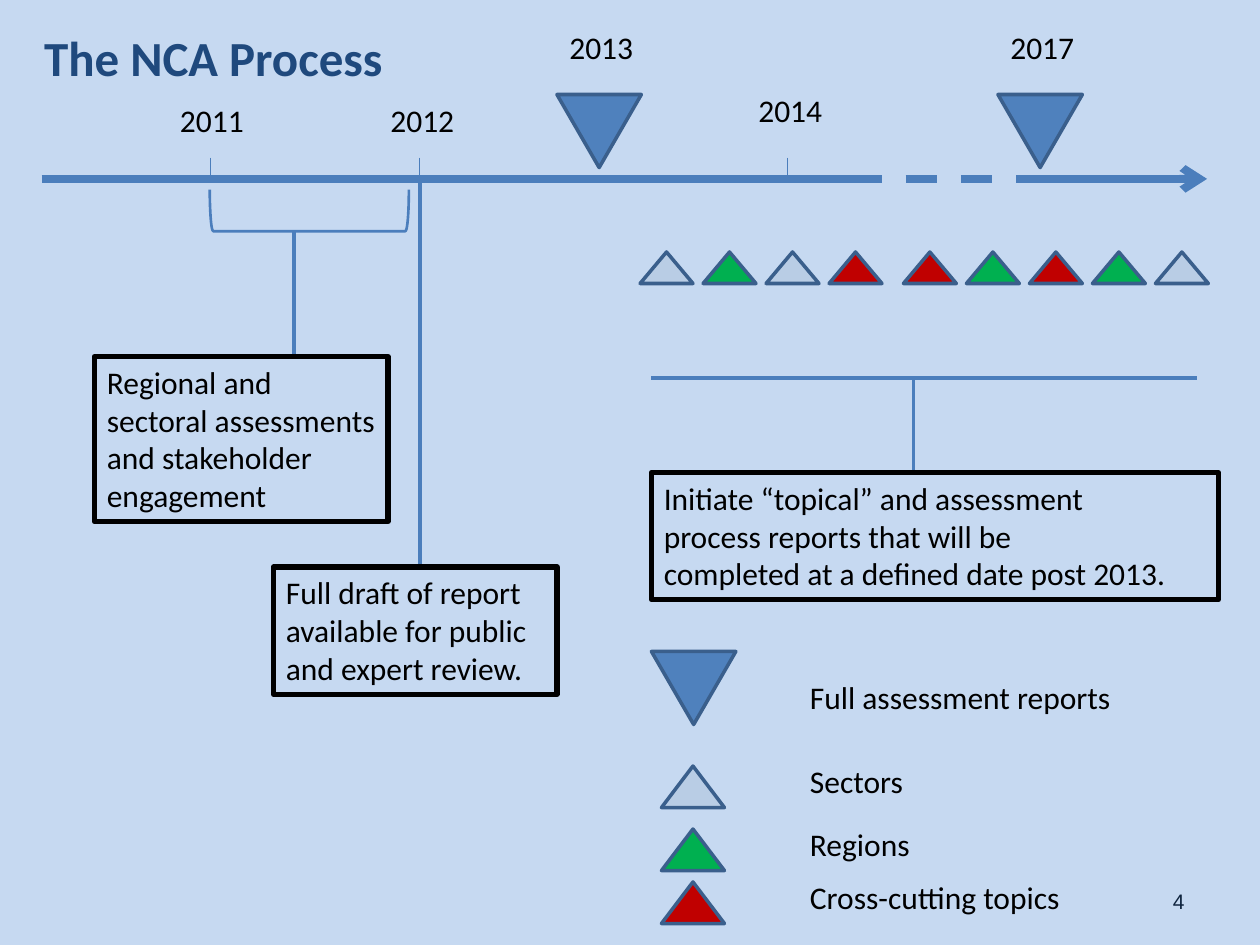
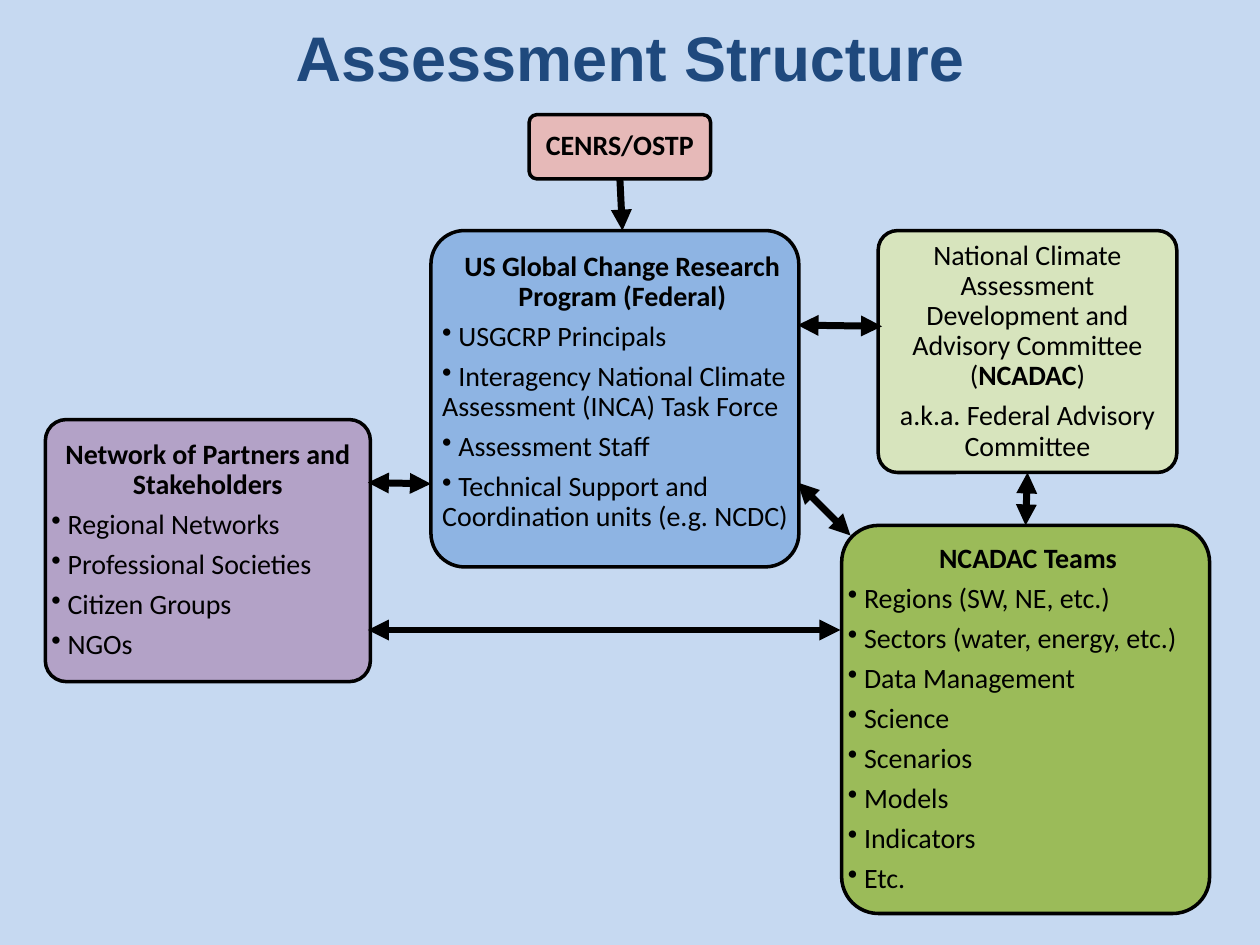
import pptx
import pptx.dml.color
import pptx.enum.dml
import pptx.enum.shapes
import pptx.enum.text
import pptx.oxml
import pptx.oxml.ns
import pptx.util

Inches, Pt = pptx.util.Inches, pptx.util.Pt
RGBColor = pptx.dml.color.RGBColor
SHAPE = pptx.enum.shapes.MSO_SHAPE
ALIGN = pptx.enum.text.PP_ALIGN
ANCHOR = pptx.enum.text.MSO_ANCHOR
qn = pptx.oxml.ns.qn

SKY = RGBColor(0xC6, 0xD9, 0xF1)
NAVY = RGBColor(0x1F, 0x49, 0x7D)
INK = RGBColor(0x0F, 0x24, 0x3E)
BLACK = RGBColor(0, 0, 0)
BLUE = RGBColor(0x4F, 0x81, 0xBD)
EDGE = RGBColor(0x3A, 0x5F, 0x8C)
RULE = RGBColor(0x4B, 0x7E, 0xBC)
PALE = RGBColor(0xB9, 0xCD, 0xE5)
GREEN = RGBColor(0x00, 0xB0, 0x50)
RED = RGBColor(0xC0, 0x00, 0x00)
PINK = RGBColor(0xE6, 0xB9, 0xB8)
AZURE = RGBColor(0x8E, 0xB4, 0xE3)
MAUVE = RGBColor(0xB3, 0xA2, 0xC7)
CREAM = RGBColor(0xD7, 0xE4, 0xBD)
OLIVE = RGBColor(0x9B, 0xBB, 0x59)

BODY = {"name": "Calibri", "size": Pt(18), "bold": False}
SMALL = {"name": "Calibri", "size": Pt(16)}
PAGE = {"name": "Arial", "size": Pt(12), "bold": False}
TIGHT = {"line_spacing": 0.9, "space_after": Pt(5.6)}
BARE = dict.fromkeys(
    ("margin_left", "margin_top", "margin_right", "margin_bottom"), 0)
SLIM = {"margin_left": Inches(0.05), "margin_right": Inches(0.05),
        "margin_top": Inches(0.01), "margin_bottom": Inches(0.01)}

YEARS = [("2011", 1.33, 0.75), ("2012", 3, 0.75), ("2013", 4.42, 0.17),
         ("2014", 5.92, 0.67), ("2017", 7.92, 0.17)]
TICKS = [1.67, 3.33, 6.25]
PEAKS = [(4.42, 0.75), (7.92, 0.75), (5.17, 5.17)]
TOPICS = {"Sectors": (PALE, 6.08), "Regions": (GREEN, 6.58),
          "Cross-cutting topics": (RED, 7)}
S, R, C = (fill for fill, top in TOPICS.values())
ROWS = [(5.08, [S, R, S, C]), (7.17, [C, R, C, R, S])]
AXIS = 1.42
RULES = [
    ((3.33, 4.5), (3.33, AXIS), 2.25, {}),
    ((7.25, 3.75), (7.25, 3), 2.25, {}),
    ((5.17, 3), (9.5, 3), 2.25, {}),
    ((2.33, 2.83), (2.33, 1.83), 2.25, {}),
    ((0.33, AXIS), (6.75, AXIS), 4.5, {}),
    ((6.75, AXIS), (8.17, AXIS), 4.5, {"dash": True}),
    ((8.17, AXIS), (9.58, AXIS), 4.5, {"tail": "arrow"}),
]
NOTES = [
    ((0.75, 2.83, 2.33, 1.31),
     ["Regional and sectoral assessments and stakeholder engagement"]),
    ((2.17, 4.5, 2.25, 1.01),
     ["Full draft of report available for public and expert review."]),
    ((5.17, 3.75, 4.5, 1.01),
     ["Initiate “topical” and assessment", "process reports that will be",
      "completed at a defined date post 2013."]),
]

PANELS = {
    "office": {"at": (4.2, 0.91, 1.44, 0.51), "fill": PINK, "bend": 0.12,
               "heads": [[("CENRS/OSTP", True)]]},
    "program": {
        "at": (3.42, 1.83, 2.92, 2.67), "fill": AZURE, "bend": 0.1,
        "text": (3.46, 1.83, 2.96, 2.57),
        "heads": [[("US Global Change Research Program (Federal)", True)]],
        "items": ["USGCRP Principals",
                  "Interagency National Climate Assessment (INCA) Task Force",
                  "Assessment Staff",
                  "Technical Support and Coordination units (e.g. NCDC)"]},
    "network": {
        "at": (0.36, 3.33, 2.58, 2.08), "fill": MAUVE, "bend": 0.08,
        "heads": [[("Network of Partners and Stakeholders", True)]],
        "items": ["Regional Networks", "Professional Societies",
                  "Citizen Groups", "NGOs"]},
    "board": {
        "at": (6.97, 1.83, 2.37, 1.92), "fill": CREAM, "bend": 0.08,
        "heads": [[("National Climate Assessment Development and "
                    "Advisory Committee (", False),
                   ("NCADAC", True), (")", False)],
                  [("a.k.a. Federal Advisory Committee", False)]]},
    "teams": {
        "at": (6.68, 4.17, 2.92, 3.08), "fill": OLIVE, "bend": 0.1,
        "text": (6.68, 4.17, 2.96, 3.08),
        "heads": [[("NCADAC Teams", True)]],
        "items": ["Regions (SW, NE, etc.)", "Sectors (water, energy, etc.)",
                  "Data Management", "Science", "Scenarios", "Models",
                  "Indicators", "Etc."]},
}
BOTH = {"head": "triangle", "tail": "triangle"}
ARROWS = [
    ((4.94, 1.42), (4.94, 1.83), {"tail": "triangle"}, ("office", 2), None),
    ((7, 2.59), (6.33, 2.58), BOTH, None, None),
    ((8.16, 4.17), (8.17, 3.75), BOTH, ("teams", 0), ("board", 2)),
    ((6.75, 4.25), (6.33, 3.83), BOTH, None, None),
    ((2.92, 3.83), (3.42, 3.84), BOTH, None, None),
    ((6.67, 5), (2.92, 5), BOTH, None, None),
]


def style(item, looks):
    for name, value in looks.items():
        setattr(item, name, value)


def write(frame, paras, look, color=BLACK, form=None):
    for i, (runs, align, dot) in enumerate(paras):
        para = frame.paragraphs[0] if i == 0 else frame.add_paragraph()
        if dot:
            mark = pptx.oxml.parse_xml(
                f'<a:buChar {pptx.oxml.ns.nsdecls("a")} char="•"/>')
            para._p.get_or_add_pPr().append(mark)
        style(para, {"alignment": align, **(form or {})})
        for text, bold in runs:
            run = para.add_run()
            run.text = text
            style(run.font, {**look, "bold": bold})
            run.font.color.rgb = color


def plain(text, align=ALIGN.LEFT, bold=False):
    return [(text, bold)], align, False


def label(slide, at, paras, look=BODY, color=BLACK, form=None, **frame):
    box = slide.shapes.add_textbox(*map(Inches, at))
    style(box.text_frame, {"word_wrap": True, **frame})
    write(box.text_frame, paras, look, color, form)


def shape(slide, kind, at, fill, edge, width, turn=0):
    item = slide.shapes.add_shape(kind, *map(Inches, at))
    item.shadow.inherit = False
    item.rotation = turn
    if fill is None:
        item.fill.background()
    else:
        item.fill.solid()
        item.fill.fore_color.rgb = fill
    item.line.color.rgb = edge
    item.line.width = Pt(width)
    return item


def wire(slide, start, end, color, width, dash=False, **tips):
    item = slide.shapes.add_connector(
        pptx.enum.shapes.MSO_CONNECTOR.STRAIGHT, *map(Inches, start + end))
    item.line.color.rgb = color
    item.line.width = Pt(width)
    if dash:
        item.line.dash_style = pptx.enum.dml.MSO_LINE.DASH
    props = item._element.spPr
    for side in ("head", "tail"):
        if side in tips:
            tip = props.find(qn("a:ln")).makeelement(
                qn(f"a:{side}End"), {"type": tips[side]})
            props.find(qn("a:ln")).append(tip)
    props.append(props.makeelement(qn("a:effectLst"), {}))
    return item


def start(deck, text, at, look, align, **frame):
    slide = deck.slides.add_slide(deck.slide_layouts[5])
    title = slide.shapes.title
    style(title, dict(zip(("left", "top", "width", "height"),
                          map(Inches, at))))
    style(title.text_frame,
          {"auto_size": pptx.enum.text.MSO_AUTO_SIZE.NONE, **frame})
    write(title.text_frame, [plain(text, align, True)], look, NAVY)
    return slide


def process(deck):
    slide = start(deck, "The NCA Process", (0.25, 0.17, 2.92, 0.57),
                  {"name": "Calibri", "size": Pt(28)}, ALIGN.LEFT,
                  word_wrap=False, vertical_anchor=ANCHOR.TOP)
    for head, tail, width, looks in RULES:
        wire(slide, head, tail, RULE, width, **looks)
    for x in TICKS:
        wire(slide, (x, 1.25), (x, AXIS), RULE, 0.75)
    shape(slide, SHAPE.LEFT_BRACKET, (2.29, 0.88, 0.33, 1.58),
          None, RULE, 1.5, 270)
    for text, x, y in YEARS:
        label(slide, (x, y, 0.71, 0.4), [plain(text)], word_wrap=False)
    for x, y in PEAKS:
        shape(slide, SHAPE.ISOSCELES_TRIANGLE, (x, y, 0.67, 0.58),
              BLUE, EDGE, 2, 180)
    for left, fills in ROWS:
        for i, fill in enumerate(fills):
            shape(slide, SHAPE.ISOSCELES_TRIANGLE,
                  (left + 0.5 * i, 2, 0.42, 0.25), fill, EDGE, 2)
    for at, lines in NOTES:
        frame = shape(slide, SHAPE.RECTANGLE, at, None, BLACK, 3).text_frame
        style(frame, {"word_wrap": True, "vertical_anchor": ANCHOR.TOP})
        write(frame, [plain(line) for line in lines], BODY)
    label(slide, (6.33, 5.33, 2.6, 0.4), [plain("Full assessment reports")],
          word_wrap=False)
    for text, (fill, top) in TOPICS.items():
        shape(slide, SHAPE.ISOSCELES_TRIANGLE, (5.25, top, 0.5, 0.33),
              fill, EDGE, 2)
        label(slide, (6.33, top - 0.08, 2.58, 0.4), [plain(text)])
    label(slide, (9, 6.95, 0.5, 0.4), [plain("4", ALIGN.RIGHT)], PAGE, INK,
          vertical_anchor=ANCHOR.MIDDLE)


def structure(deck):
    slide = start(deck, "Assessment Structure", (0.5, 0, 9, 0.9),
                  {"name": "Arial", "size": Pt(36)}, ALIGN.CENTER,
                  vertical_anchor=ANCHOR.MIDDLE)
    boxes = {}
    for name, panel in PANELS.items():
        box = shape(slide, SHAPE.ROUNDED_RECTANGLE, panel["at"],
                    panel["fill"], BLACK, 2)
        box.adjustments[0] = panel["bend"]
        boxes[name] = box
        paras = [(runs, ALIGN.CENTER, False) for runs in panel["heads"]]
        paras += [([(f" {item}", False)], ALIGN.LEFT, True)
                  for item in panel.get("items", [])]
        if "text" in panel:
            label(slide, panel["text"], paras, SMALL, form=TIGHT,
                  vertical_anchor=ANCHOR.MIDDLE, **SLIM)
        else:
            style(box.text_frame, {"word_wrap": True, **BARE,
                                   "vertical_anchor": ANCHOR.MIDDLE})
            write(box.text_frame, paras, SMALL, form=TIGHT)
    for head, tail, tips, first, last in ARROWS:
        arrow = wire(slide, head, tail, BLACK, 4, **tips)
        for join, end in ((arrow.begin_connect, first),
                          (arrow.end_connect, last)):
            if end:
                join(boxes[end[0]], end[1])


def main():
    deck = pptx.Presentation()
    style(deck, {"slide_width": Inches(10), "slide_height": Inches(7.5)})
    back = deck.slide_master.background.fill
    back.solid()
    back.fore_color.rgb = SKY
    process(deck)
    structure(deck)
    deck.save("out.pptx")


if __name__ == "__main__":
    main()
